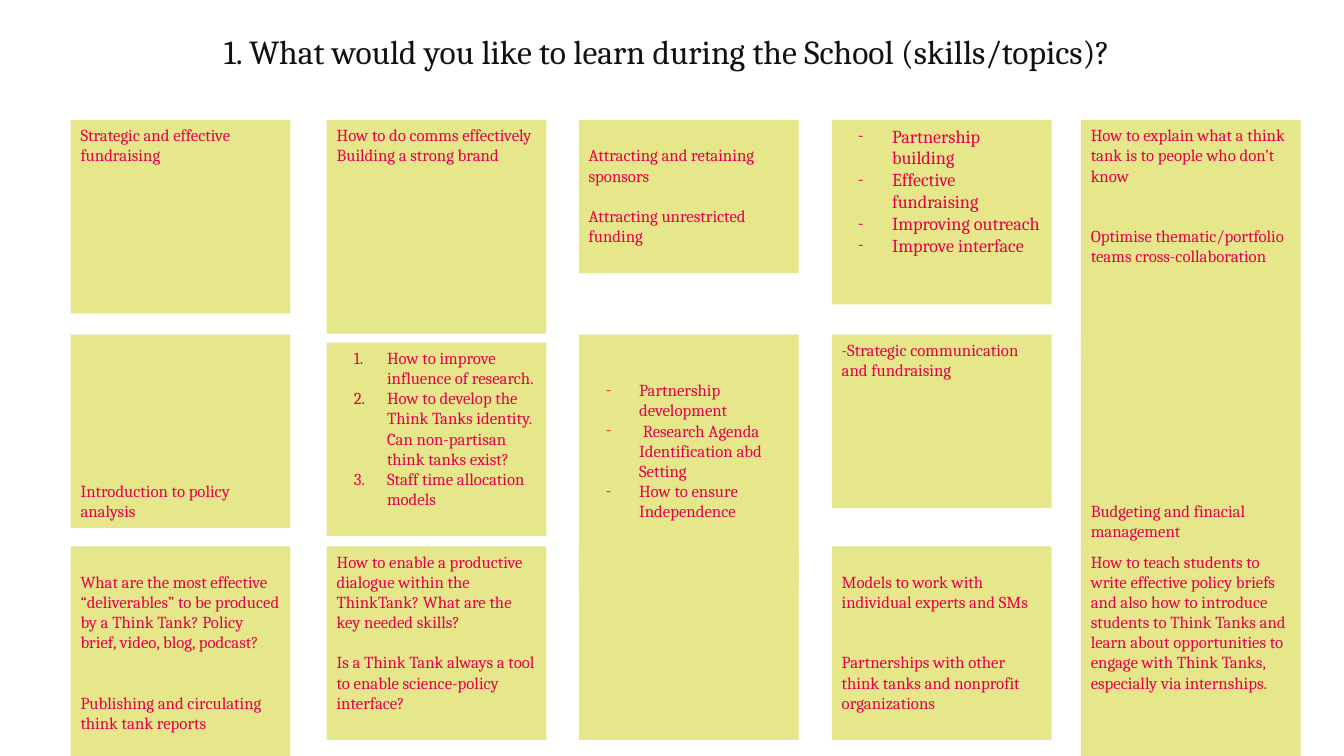
from lxml.etree import SubElement
from pptx import Presentation
from pptx.dml.color import RGBColor as Rgb
from pptx.enum.shapes import MSO_SHAPE as Shape
from pptx.enum.text import MSO_ANCHOR as Anchor, PP_ALIGN as Align
from pptx.oxml.ns import qn
from pptx.util import Inches, Pt

HUES = {"ink": "111111", "note": "E6E68B", "text": "E7004C"}
FONT = "Cambria"
LINE = 0.2
WIDE = 2.18
COLS = [0.7, 3.24, 5.74, 8.25, 10.72]
ROWS = [1.19, 3.32, 5.42]

NOTES = [
    [
        (1.92, [(0, "Strategic and effective fundraising")], {}),
        (1.92, [(7, "Introduction to policy analysis")], {}),
        (2.12, [
            (1, "What are the most effective “deliverables” to be produced by a "
                "Think Tank? Policy brief, video, blog, podcast?"),
            (2, "Publishing and circulating think tank reports"),
        ], {}),
    ],
    [
        (2.12, [
            (0, "How to do comms effectively"),
            (0, "Building a strong brand"),
        ], {}),
        (1.92, [
            (0, "How to improve influence of research."),
            (0, "How to develop the Think Tanks identity. "
                "Can non-partisan think tanks exist?"),
            (0, "Staff time allocation models"),
        ], {"mark": "1.", "drop": 0.08}),
        (1.92, [
            (0, "How to enable a productive dialogue within the ThinkTank? "
                "What are the key needed skills?"),
            (1, "Is a Think Tank always a tool to enable science-policy interface?"),
        ], {}),
    ],
    [
        (1.52, [
            (1, "Attracting and retaining sponsors"),
            (1, "Attracting unrestricted funding"),
        ], {}),
        (2.52, [
            (2, "Partnership development"),
            (0, " Research Agenda Identification abd Setting"),
            (0, "How to ensure Independence"),
        ], {"mark": "-"}),
        (1.92, [], {}),
    ],
    [
        (1.83, [
            (0, "Partnership building"),
            (0, "Effective fundraising"),
            (0, "Improving outreach"),
            (0, "Improve interface"),
        ], {"mark": "-", "size": 13}),
        (1.72, [(0, "-Strategic communication and fundraising")], {}),
        (1.92, [
            (1, "Models to work with individual experts and SMs"),
            (2, "Partnerships with other think tanks and nonprofit organizations"),
        ], {}),
    ],
    [
        (2.32, [
            (0, "How to explain what a think tank is to people who don’t know"),
            (2, "Optimise thematic/portfolio teams cross-collaboration"),
        ], {}),
        (2.12, [(8, "Budgeting and finacial management")], {}),
        (2.12, [
            (0, "How to teach students to write effective policy briefs and also "
                "how to introduce students to Think Tanks and learn about "
                "opportunities to engage with Think Tanks, especially via internships."),
        ], {}),
    ],
]


def add_mark(para, mark, hue, size):
    props = para._p.get_or_add_pPr()
    props.set("marL", str(Inches(0.5)))
    props.set("indent", str(-Inches(0.33 if size == 12 else 0.34)))
    tint = SubElement(props, qn("a:buClr"))
    SubElement(tint, qn("a:srgbClr"), val=HUES[hue])
    SubElement(props, qn("a:buFont"), typeface=FONT)
    if mark == "1.":
        SubElement(props, qn("a:buAutoNum"), type="arabicPeriod")
    else:
        SubElement(props, qn("a:buChar"), char=mark)


def put_text(frame, lines, size=12, hue="text", align=Align.LEFT, mark=None):
    frame.word_wrap = True
    frame.vertical_anchor = Anchor.TOP
    for side in ("left", "right"):
        setattr(frame, f"margin_{side}", Inches(0.1))
    frame.margin_top = frame.margin_bottom = Inches(0.05)
    for i, (gap, words) in enumerate(lines):
        para = frame.add_paragraph() if i else frame.paragraphs[0]
        para.alignment = align
        if i:
            para.space_before = Inches(gap * LINE)
        else:
            frame.margin_top = Inches(0.05 + gap * LINE)
        if mark:
            add_mark(para, mark, hue, size)
        run = para.add_run()
        run.text = words
        run.font.name = FONT
        run.font.size = Pt(size)
        run.font.color.rgb = Rgb.from_string(HUES[hue])


def add_title(slide, x, y, w, h):
    box = slide.shapes.add_textbox(Inches(x), Inches(y), Inches(w), Inches(h))
    words = "1. What would you like to learn during the School (skills/topics)? "
    put_text(box.text_frame, [(0, words)], size=24, hue="ink", align=Align.CENTER)


def add_note(slide, x, y, w, h, lines, drop=0, **style):
    note = slide.shapes.add_shape(
        Shape.RECTANGLE, Inches(x), Inches(y + drop), Inches(w), Inches(h))
    note.shadow.inherit = False
    note.fill.solid()
    note.fill.fore_color.rgb = Rgb.from_string(HUES["note"])
    note.line.fill.background()
    put_text(note.text_frame, lines, **style)


def add_board(slide):
    for x, stack in zip(COLS, NOTES):
        for y, (high, lines, style) in zip(ROWS, stack):
            add_note(slide, x, y, WIDE, high, lines, **style)


def main():
    deck = Presentation()
    deck.slide_width = Inches(13.33)
    deck.slide_height = Inches(7.5)
    slide = deck.slides.add_slide(deck.slide_layouts[6])
    add_title(slide, 0.36, 0.26, 12.58, 0.5)
    add_board(slide)
    deck.save("out.pptx")


if __name__ == "__main__":
    main()
